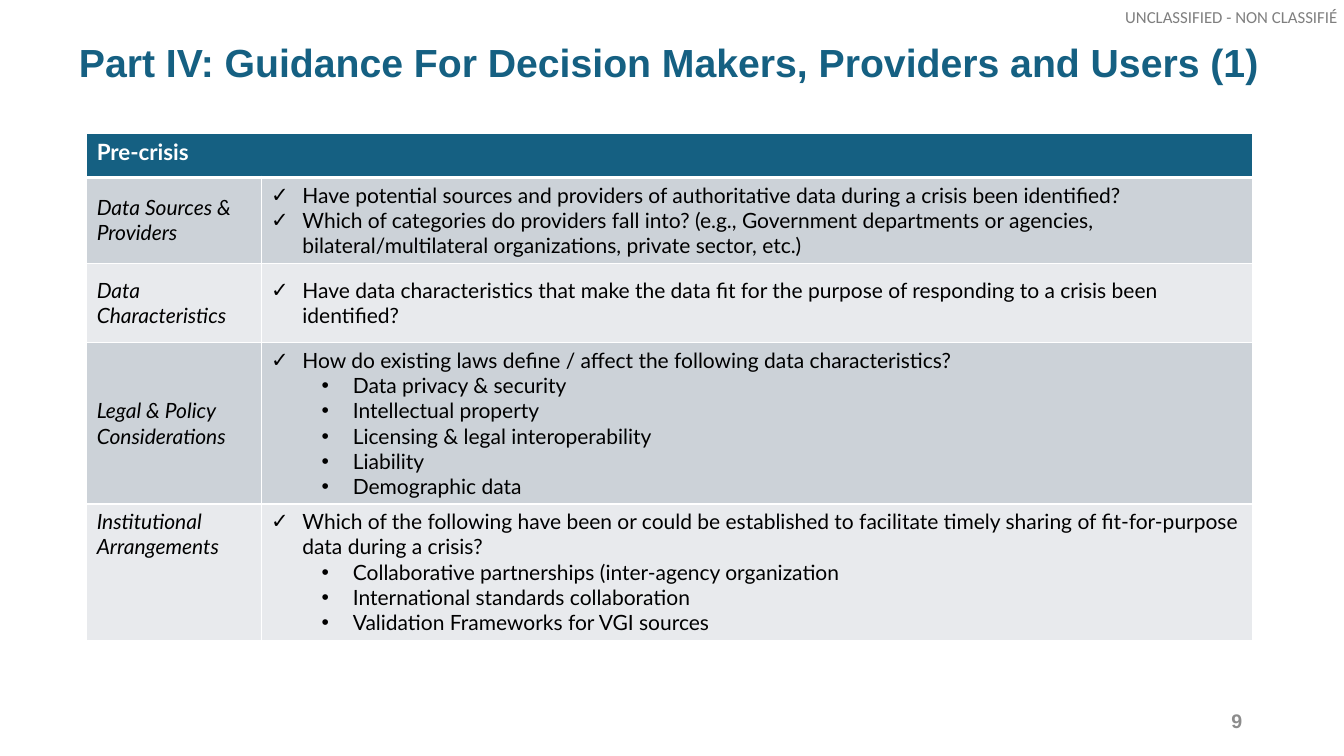
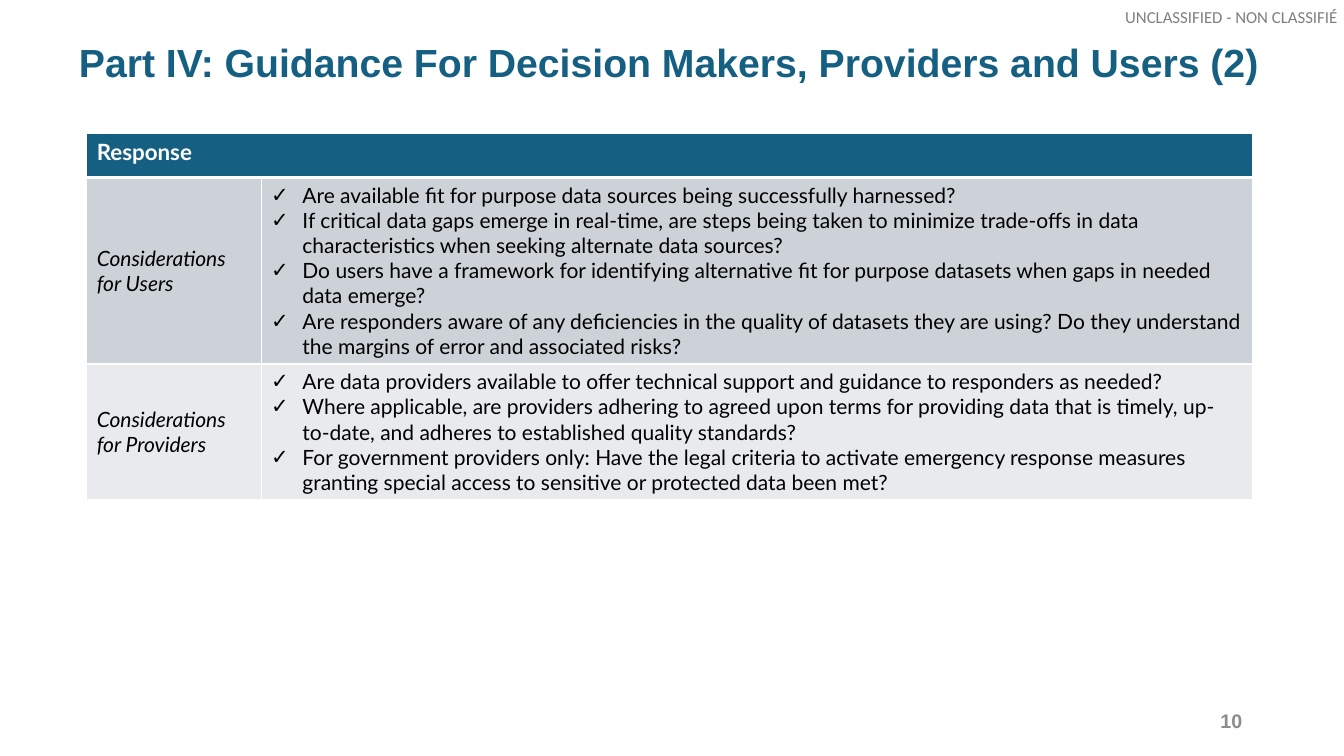
from lxml.etree import SubElement as Sub
from pptx import Presentation
from pptx.dml.color import RGBColor as RGB
from pptx.enum.text import MSO_ANCHOR as Anchor, PP_ALIGN as Align
from pptx.oxml.ns import qn
from pptx.util import Inches, Pt

# Shared look
HUES = {
    "blue": "156082", "white": "FFFFFF", "black": "000000",
    "mark": "7F7F7F", "page": "8C8C8C", "dark": "CCD2D8", "light": "E8EAED",
}
WIDE, HIGH = Inches(13.33), Inches(7.5)
COL, ROW = WIDE / 100, HIGH / 100  # grid of 100 columns and 100 rows
LABEL, BODY = 12.98, 73.74         # table columns
HEAD, LINE = 5.87, 10.53           # table rows
STEP, HANG = 0.5, 0.31             # list indents in inches
TITLE = "Part IV: Guidance For Decision Makers, Providers and Users ({})"
MARK = "UNCLASSIFIED - NON CLASSIFIÉ"

# Content: each row is label, list (a nested list is one level down), anchor
PRE = [
    ("Data Sources & Providers", [
        "Have potential sources and providers of authoritative data during a crisis been identified?",
        "Which of categories do providers fall into? (e.g., Government departments or agencies, "
        "bilateral/multilateral organizations, private sector, etc.)",
    ], Anchor.MIDDLE),
    ("Data Characteristics", [
        "Have data characteristics that make the data fit for the purpose of responding to a "
        "crisis been identified?",
    ], Anchor.MIDDLE),
    ("Legal & Policy Considerations", [
        "How do existing laws define / affect the following data characteristics?",
        ["Data privacy & security", "Intellectual property",
         "Licensing & legal interoperability", "Liability", "Demographic data"],
    ], Anchor.MIDDLE),
    ("Institutional Arrangements", [
        "Which of the following have been or could be established to facilitate timely sharing "
        "of fit-for-purpose data during a crisis?",
        ["Collaborative partnerships (inter-agency organization",
         "International standards collaboration", "Validation Frameworks for VGI sources"],
    ], Anchor.TOP),
]
REPLY = [
    ("Considerations for Users", [
        "Are available fit for purpose data sources being successfully harnessed?",
        "If critical data gaps emerge in real-time, are steps being taken to minimize trade-offs "
        "in data characteristics when seeking alternate data sources?",
        "Do users have a framework for identifying alternative fit for purpose datasets when "
        "gaps in needed data emerge?",
        "Are responders aware of any deficiencies in the quality of datasets they are using? "
        "Do they understand the margins of error and associated risks?",
    ], Anchor.MIDDLE),
    ("Considerations for Providers", [
        "Are data providers available to offer technical support and guidance to responders as needed?",
        "Where applicable, are providers adhering to agreed upon terms for providing data that "
        "is timely, up-to-date, and adheres to established quality standards?",
        "For government providers only: Have the legal criteria to activate emergency response "
        "measures granting special access to sensitive or protected data been met?",
    ], Anchor.MIDDLE),
]
PAGES = [(9, "Pre-crisis", PRE), (10, "Response", REPLY)]


def area(x, y, w, h):
    return int(x * COL), int(y * ROW), int(w * COL), int(h * ROW)


def style(par, face, size, hue, bold=False, slant=False):
    for run in par.runs:
        font = run.font
        font.name, font.size = face, Pt(size)
        font.bold, font.italic = bold, slant
        font.color.rgb = RGB.from_string(HUES[hue])


def add_title(slide, text):
    frame = slide.shapes.title.text_frame
    frame.text = text
    frame.word_wrap = True
    frame.vertical_anchor = Anchor.MIDDLE
    par = frame.paragraphs[0]
    par.alignment, par.line_spacing = Align.CENTER, 0.9
    style(par, "Arial", 28, "blue", bold=True)


def add_note(slide, text, box, look, align=Align.LEFT, pad=0.0):
    frame = slide.shapes.add_textbox(*area(*box)).text_frame
    frame.text = text
    frame.word_wrap = True
    frame.vertical_anchor = Anchor.MIDDLE
    frame.margin_left = frame.margin_right = Inches(pad)
    frame.margin_top = frame.margin_bottom = 0
    par = frame.paragraphs[0]
    par.alignment = align
    style(par, *look)


# Table parts
def paint(cell, hue, top=1, low=1):
    cell.fill.solid()
    cell.fill.fore_color.rgb = RGB.from_string(HUES[hue])
    props = cell._tc.get_or_add_tcPr()
    for spot, (side, size) in enumerate(zip("LRTB", (1, 1, top, low))):
        edge = Sub(props, qn("a:ln" + side), w=str(Pt(size)))
        Sub(Sub(edge, qn("a:solidFill")), qn("a:srgbClr"), val=HUES["white"])
        props.insert(spot, edge)


def bullet(par, level):
    props = par._p.get_or_add_pPr()
    props.set("marL", str(Inches(HANG + STEP * level)))
    props.set("indent", str(-Inches(HANG)))
    Sub(props, qn("a:buFont"), typeface="Arial")
    Sub(props, qn("a:buChar"), char="✓•"[level])
    par.level = level


def flat(items, level=0):
    for item in items:
        if isinstance(item, list):
            yield from flat(item, level + 1)
        else:
            yield item, level


def fill_list(cell, items):
    frame = cell.text_frame
    for spot, (text, level) in enumerate(flat(items)):
        par = frame.add_paragraph() if spot else frame.paragraphs[0]
        par.text = text
        bullet(par, level)
        style(par, "Lato", 15, "black")
    cell.vertical_anchor = Anchor.MIDDLE


def add_grid(slide, head, rows):
    box = area(6.45, 17.6, LABEL + BODY, HEAD + LINE * len(rows))
    table = slide.shapes.add_table(len(rows) + 1, 2, *box).table
    for col, wide in zip(table.columns, (LABEL, BODY)):
        col.width = int(wide * COL)
    for row in table.rows:
        row.height = int(LINE * ROW)
    table.rows[0].height = int(HEAD * ROW)

    # Header across both columns
    for spot in (0, 1):
        paint(table.cell(0, spot), "blue", low=3)
    top = table.cell(0, 0)
    top.merge(table.cell(0, 1))
    top.text_frame.text = head
    style(top.text_frame.paragraphs[0], "Lato", 16, "white", bold=True)

    # Banded rows
    for num, (name, items, anchor) in enumerate(rows, 1):
        label, body = table.cell(num, 0), table.cell(num, 1)
        for cell in (label, body):
            paint(cell, "dark" if num % 2 else "light", top=3 if num == 1 else 1)
        label.text_frame.text = name
        label.vertical_anchor = anchor
        style(label.text_frame.paragraphs[0], "Lato", 15, "black", slant=True)
        fill_list(body, items)


def main():
    deck = Presentation()
    deck.slide_width, deck.slide_height = WIDE, HIGH
    layout = deck.slide_layouts[5]
    title = layout.placeholders[0]
    title.left, title.top, title.width, title.height = area(3.5, 4.67, 92.5, 7.73)
    for part, (page, head, rows) in enumerate(PAGES, 1):
        slide = deck.slides.add_slide(layout)
        add_note(slide, MARK, (83.72, 0.93, 16.2, 2.67), ("Calibri", 12, "mark"))
        add_title(slide, TITLE.format(part))
        add_note(slide, str(page), (70.67, 92.67, 22.5, 5.33),
                 ("Arial", 14, "page", True), Align.RIGHT, 0.1)
        add_grid(slide, head, rows)
    deck.save("out.pptx")


if __name__ == "__main__":
    main()
